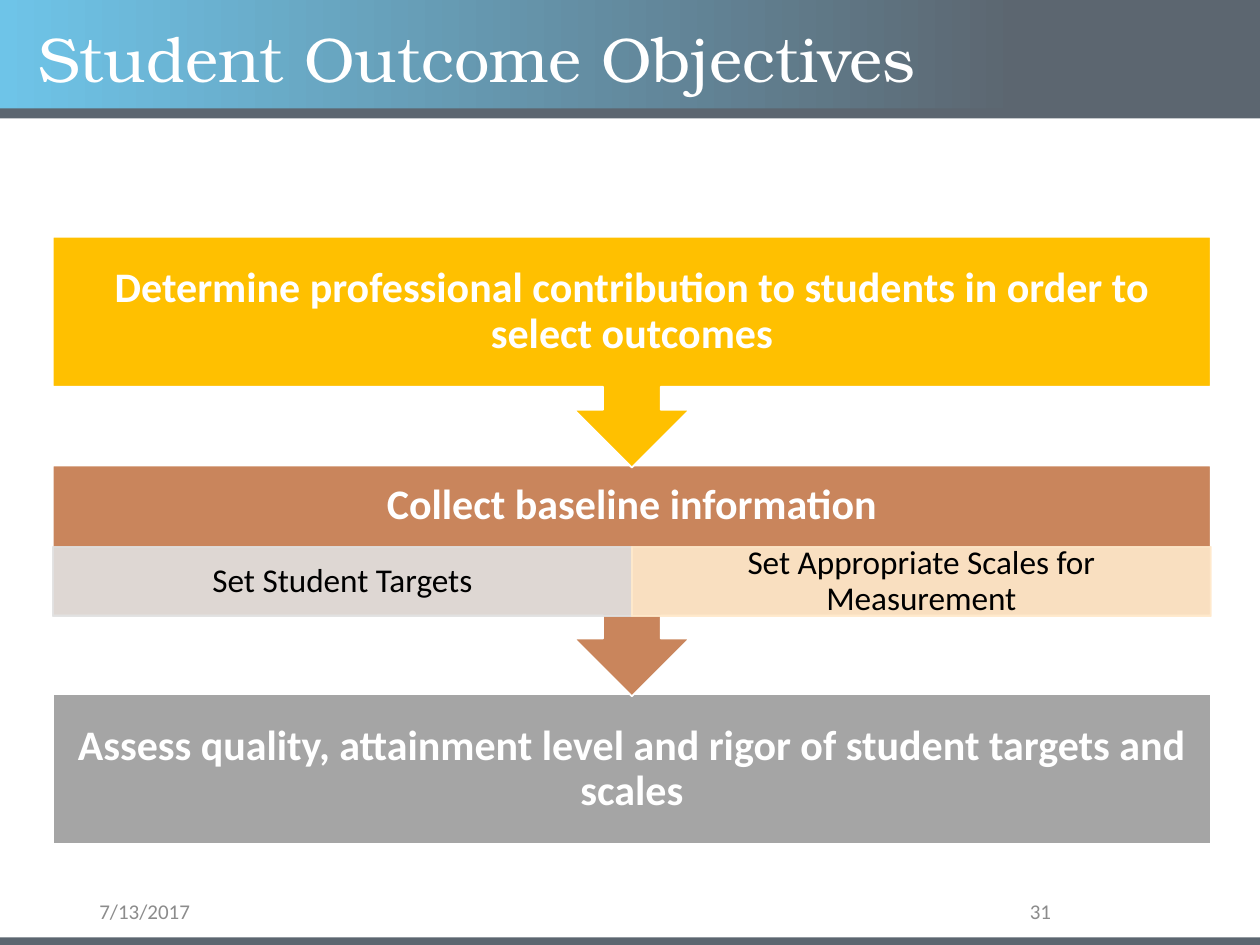
"""Build the Student Outcome Objectives process slide."""
from lxml.etree import SubElement
from pptx import Presentation
from pptx.dml.color import RGBColor
from pptx.enum.shapes import MSO_SHAPE as Shape
from pptx.enum.text import MSO_ANCHOR as Anchor, PP_ALIGN as Align
from pptx.oxml.ns import qn
from pptx.util import Inches, Pt

COLORS = {
    "sky": "6EC4E8", "slate": "5C6670", "white": "FFFFFF", "black": "000000",
    "footer": "8C8C8C", "gold": "FFC000", "copper": "C9855C", "gray": "A5A5A5",
    "pale_gray": "E1E1E1", "peach": "FFE9CB",
}
TITLE = "Student Outcome Objectives"
DATE, PAGE = "7/13/2017", "31"
STEPS = [
    ("Determine professional contribution to students in order to select outcomes", "gold", 1.19),
    ("Collect baseline information", "copper", 0.64),
    ("Assess quality, attainment level and rigor of student targets and scales", "gray", 1.19),
]
SUBSTEPS = [
    ("Set Student Targets", "pale_gray"),
    ("Set Appropriate Scales for Measurement", "peach"),
]
LEFT, TOP, WIDTH, PITCH = 0.42, 1.88, 9.19, 1.815
CALLOUT_HEIGHT, STEP_HEIGHT = 1.83, 1.19
SUBSTEP_TOP, SUBSTEP_HEIGHT = 4.34, 0.55


def rgb(name):
    return RGBColor.from_string(COLORS[name])


def add_block(slide, box, fill, line=None, kind=Shape.RECTANGLE, alpha=None):
    block = slide.shapes.add_shape(kind, *map(Inches, box))
    block.shadow.inherit = False
    block.fill.solid()
    block.fill.fore_color.rgb = rgb(fill)
    if line:
        block.line.color.rgb = rgb(line)
        block.line.width = Pt(1)
    else:
        block.line.fill.background()
    if alpha:
        for color in block._element.spPr.iter(qn("a:srgbClr")):
            SubElement(color, qn("a:alpha"), val=str(alpha * 1000))
    return block


def add_label(slide, box, text, size, color, align=Align.CENTER, font="Calibri",
              bold=False, insets=(0.1, 0.05), spacing=0.9):
    frame = slide.shapes.add_textbox(*map(Inches, box)).text_frame
    frame.word_wrap = True
    frame.vertical_anchor = Anchor.MIDDLE
    frame.margin_left = frame.margin_right = Inches(insets[0])
    frame.margin_top = frame.margin_bottom = Inches(insets[1])
    paragraph = frame.paragraphs[0]
    paragraph.alignment = align
    paragraph.line_spacing = spacing
    run = paragraph.add_run()
    run.text = text
    run.font.name, run.font.size, run.font.bold = font, Pt(size), bold
    run.font.color.rgb = rgb(color)


def add_banner(slide):
    banner = add_block(slide, (0, 0, 10, 0.87), "sky")
    banner.fill.gradient()
    banner.fill.gradient_angle = 0
    for stop, (color, position) in zip(banner.fill.gradient_stops, [("sky", 0), ("slate", 0.81)]):
        stop.color.rgb = rgb(color)
        stop.position = position
    for top in (0.86, 7.44):
        add_block(slide, (0, top, 10, 0.08), "slate")
    add_label(slide, (0.21, 0.21, 8.62, 0.57), TITLE, 36, "white", Align.LEFT, "TeX Gyre Bonum")


def add_substeps(slide):
    width = WIDTH / len(SUBSTEPS)
    for column, (text, color) in enumerate(SUBSTEPS):
        box = (LEFT + column * width, SUBSTEP_TOP, width, SUBSTEP_HEIGHT)
        add_block(slide, box, color, color, alpha=90)
        add_label(slide, box, text, 19, "black", insets=(0.15, 0.03))


def add_steps(slide):
    last = len(STEPS) - 1
    for index, (text, color, label_height) in reversed(list(enumerate(STEPS))):
        top = TOP + index * PITCH
        if index == last:
            add_block(slide, (LEFT, top, WIDTH, STEP_HEIGHT), color, "white")
        else:
            callout = add_block(slide, (LEFT, top, WIDTH, CALLOUT_HEIGHT), color, "white",
                                Shape.UP_ARROW_CALLOUT)
            callout.rotation = 180
        add_label(slide, (LEFT, top, WIDTH, label_height), text, 24, "white",
                  bold=True, insets=(0.19, 0.19))
        if index == 1:
            add_substeps(slide)


def main():
    deck = Presentation()
    deck.slide_width, deck.slide_height = Inches(10), Inches(7.5)
    slide = deck.slides.add_slide(deck.slide_layouts[6])
    add_banner(slide)
    add_label(slide, (0.69, 7.12, 2.25, 0.23), DATE, 12, "footer", Align.LEFT, spacing=1.0)
    add_label(slide, (7.06, 7.12, 1.38, 0.23), PAGE, 12, "footer", Align.RIGHT, spacing=1.0)
    add_steps(slide)
    deck.save("out.pptx")


if __name__ == "__main__":
    main()
